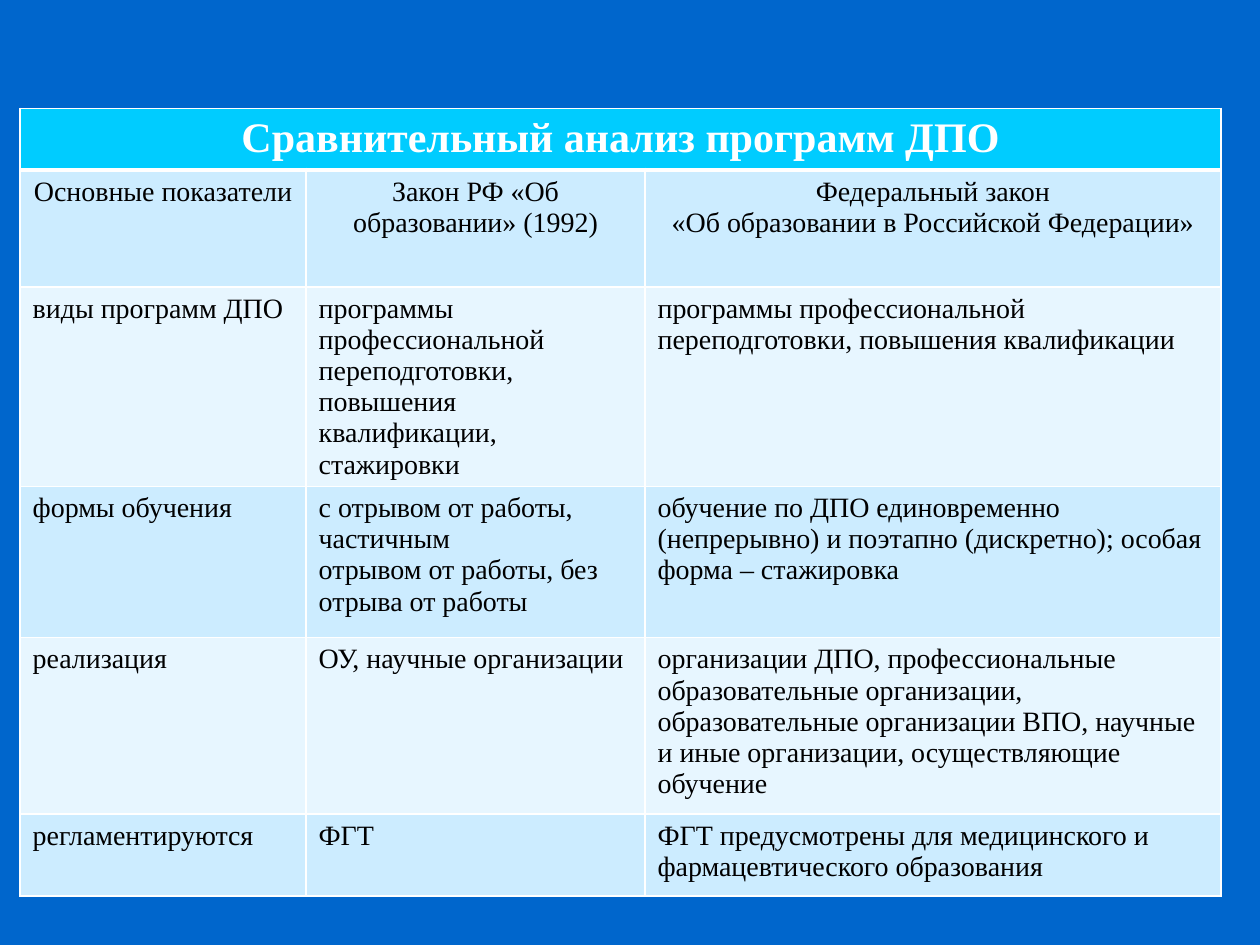
from lxml import etree
from pptx import Presentation
from pptx import util as u
from pptx.dml.color import RGBColor
from pptx.enum import text
from pptx.oxml.ns import qn

BLUE = RGBColor(0x00, 0x66, 0xCC)
CYAN = RGBColor(0x00, 0xCC, 0xFF)
BAND_DARK = RGBColor(0xCC, 0xEC, 0xFF)
BAND_LIGHT = RGBColor(0xE7, 0xF6, 0xFF)
WHITE = RGBColor(0xFF, 0xFF, 0xFF)
BLACK = RGBColor(0x00, 0x00, 0x00)

COLS = [2.27, 2.69, 4.57]
ROWS = [0.49, 0.93, 1.19, 1.2, 1.4, 0.65]
DATA = [
    ["Сравнительный анализ программ ДПО", "", ""],
    ["Основные показатели", "Закон РФ «Об образовании» (1992)",
     "Федеральный закон\n«Об образовании в Российской Федерации»"],
    ["виды программ ДПО",
     "программы профессиональной переподготовки, повышения квалификации, стажировки",
     "программы профессиональной переподготовки, повышения квалификации"],
    ["формы обучения",
     "с отрывом от работы, частичным\nотрывом от работы, без отрыва от работы",
     "обучение по ДПО единовременно (непрерывно) и поэтапно (дискретно); "
     "особая форма – стажировка"],
    ["реализация", "ОУ, научные организации",
     "организации ДПО, профессиональные образовательные организации, "
     "образовательные организации ВПО, научные и иные организации, "
     "осуществляющие обучение"],
    ["регламентируются", "ФГТ",
     "ФГТ предусмотрены для медицинского и фармацевтического образования"],
]


def set_borders(cell, bottom, top):
    """White cell borders; they must come before the fill in tcPr."""
    tcPr = cell._tc.get_or_add_tcPr()
    widths = {"a:lnL": 1, "a:lnR": 1, "a:lnT": top, "a:lnB": bottom}
    for tag, width in widths.items():
        ln = etree.SubElement(tcPr, qn(tag), w=str(u.Pt(width)))
        fill = etree.SubElement(ln, qn("a:solidFill"))
        etree.SubElement(fill, qn("a:srgbClr"), val=str(WHITE))


# Slide and background
prs = Presentation()
prs.slide_width, prs.slide_height = u.Inches(10), u.Inches(7.5)
s = prs.slides.add_slide(prs.slide_layouts[6])
s.background.fill.solid()
s.background.fill.fore_color.rgb = BLUE

# Table grid
height = u.Inches(6.41)
frame = s.shapes.add_table(len(ROWS), len(COLS), u.Inches(0.16), u.Inches(0.86),
                           u.Inches(sum(COLS)), height)
table = frame.table
for column, width in zip(table.columns, COLS):
    column.width = u.Inches(width)
for row, row_height in zip(table.rows, ROWS):
    row.height = u.Inches(row_height)
frame.height = height
table.cell(0, 0).merge(table.cell(0, len(COLS) - 1))

# Cells: title row, centred heading row, then banded body rows
for i, values in enumerate(DATA):
    title = i == 0
    for j, value in enumerate(values):
        cell = table.cell(i, j)
        set_borders(cell, bottom=3 if title else 1, top=3 if i == 1 else 1)
        cell.fill.solid()
        cell.fill.fore_color.rgb = CYAN if title else BAND_DARK if i % 2 else BAND_LIGHT
        cell.text_frame.text = value
        for p in cell.text_frame.paragraphs:
            p.alignment = text.PP_ALIGN.CENTER if i < 2 else text.PP_ALIGN.LEFT
            for r in p.runs:
                r.font.name = "Times New Roman"
                r.font.size = u.Pt(24 if title else 16)
                r.font.bold = title
                r.font.color.rgb = WHITE if title else BLACK

prs.save("out.pptx")
